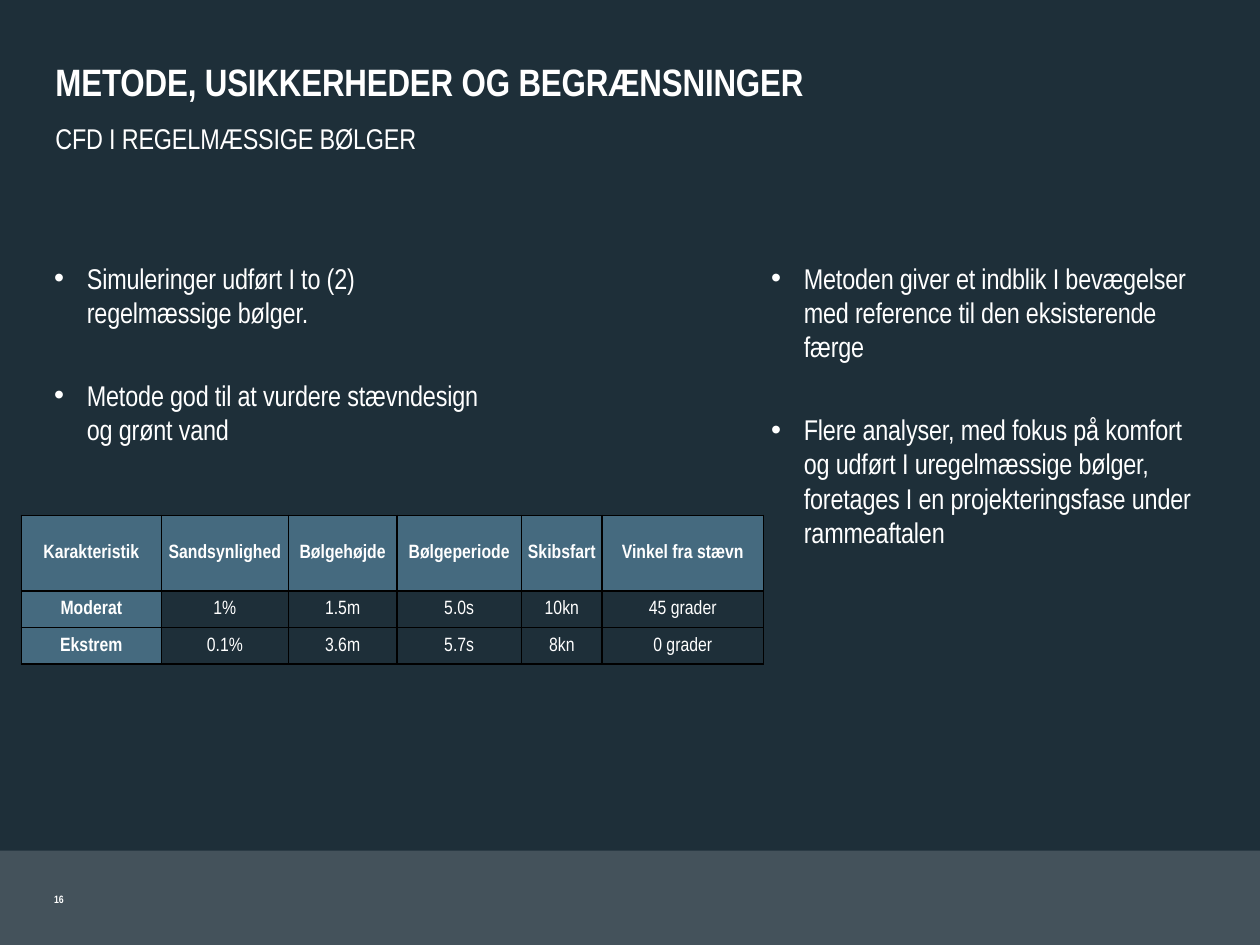
from lxml import etree
from pptx import Presentation
from pptx.dml.color import RGBColor
from pptx.enum.shapes import MSO_SHAPE
from pptx.enum.text import MSO_ANCHOR, MSO_AUTO_SIZE, PP_ALIGN
from pptx.oxml.ns import qn
from pptx.util import Inches, Pt

RECT = MSO_SHAPE.RECTANGLE
TOP, MIDDLE = MSO_ANCHOR.TOP, MSO_ANCHOR.MIDDLE
LEFT, CENTER = PP_ALIGN.LEFT, PP_ALIGN.CENTER
NO_FIT = MSO_AUTO_SIZE.NONE

# Content
TITLE = "METODE, USIKKERHEDER OG BEGRÆNSNINGER"
SUB = "CFD I REGELMÆSSIGE BØLGER"
PAGE = "16"
LISTS = [
    (0.43, ["Simuleringer udført I to (2) regelmæssige bølger.",
            "Metode god til at vurdere stævndesign og grønt vand"]),
    (6.12, ["Metoden giver et indblik I bevægelser med reference til "
            "den eksisterende færge",
            "Flere analyser, med fokus på komfort og udført I "
            "uregelmæssige bølger, foretages I en projekteringsfase "
            "under rammeaftalen"]),
]
WAVES = [
    ["Karakteristik", "Sandsynlighed", "Bølgehøjde", "Bølgeperiode",
     "Skibsfart", "Vinkel fra stævn"],
    ["Moderat", "1%", "1.5m", "5.0s", "10kn", "45 grader"],
    ["Ekstrem", "0.1%", "3.6m", "5.7s", "8kn", "0 grader"],
]
COLS = [1.11, 1.01, 0.86, 0.99, 0.64, 1.28]
ROWS = [0.6, 0.29, 0.29]

THEME = {
    "font": "Arial Narrow",
    "back": RGBColor(0x1E, 0x2F, 0x39),
    "band": RGBColor(0x44, 0x52, 0x5B),
    "head": RGBColor(0x45, 0x6A, 0x7F),
    "text": RGBColor(0xFF, 0xFF, 0xFF),
    "edge": "000000",
    "title": 21.8, "body": 16.3, "cell": 11, "page": 6.1,
}


def add_run(para, text, size, bold=False, tight=True):
    run = para.add_run()
    run.text = text
    font = run.font
    font.name, font.size, font.bold = THEME["font"], Pt(THEME[size]), bold
    font.color.rgb = THEME["text"]
    if tight:
        run._r.get_or_add_rPr().set("spc", "-10")


def set_frame(shape, box, inset=0):
    shape.left, shape.top, shape.width, shape.height = map(Inches, box)
    frame = shape.text_frame
    frame.word_wrap, frame.auto_size = True, NO_FIT
    frame.vertical_anchor = TOP
    frame.margin_left = frame.margin_right = frame.margin_bottom = 0
    frame.margin_top = Inches(inset)
    para = frame.paragraphs[0]
    para.alignment = LEFT
    return frame, para


def add_box(slide, box, inset=0):
    return set_frame(slide.shapes.add_textbox(0, 0, 0, 0), box, inset)


def add_bullet(para):
    props = para._p.get_or_add_pPr()
    props.set("marL", str(Inches(0.26)))
    props.set("indent", str(-Inches(0.26)))
    etree.SubElement(props, qn("a:buFont"), typeface="Arial")
    etree.SubElement(props, qn("a:buChar"), char="•")


def add_list(slide, left, items):
    frame, para = add_box(slide, (left, 2.07, 3.45, 3.9))
    for num, item in enumerate(items):
        if num:
            para = frame.add_paragraph()
        add_bullet(para)
        if num:
            para.space_before = Pt(23.7)
        para.space_after = Pt(4.1)
        add_run(para, item, "body")


def add_edges(cell):
    props = cell._tc.get_or_add_tcPr()
    for side in ("lnL", "lnR", "lnT", "lnB"):
        line = etree.SubElement(props, qn("a:" + side), w=str(Pt(1)))
        fill = etree.SubElement(line, qn("a:solidFill"))
        etree.SubElement(fill, qn("a:srgbClr"), val=THEME["edge"])


def fill_cell(cell, text, head):
    add_edges(cell)
    if head:
        cell.fill.solid()
        cell.fill.fore_color.rgb = THEME["head"]
    else:
        cell.fill.background()
    cell.vertical_anchor = MIDDLE
    cell.margin_left = cell.margin_right = Inches(0.05)
    cell.margin_top = cell.margin_bottom = 0
    para = cell.text_frame.paragraphs[0]
    para.alignment, para.line_spacing = CENTER, 1.07
    para.space_after = Pt(8)
    add_run(para, text, "cell", head, tight=False)


def add_waves(slide):
    table = slide.shapes.add_table(
        len(ROWS), len(COLS), Inches(0.17), Inches(4.09),
        Inches(sum(COLS)), Inches(sum(ROWS))).table
    for col, width in zip(table.columns, COLS):
        col.width = Inches(width)
    for row, height in zip(table.rows, ROWS):
        row.height = Inches(height)
    for r, line in enumerate(WAVES):
        for c, text in enumerate(line):
            fill_cell(table.cell(r, c), text, r == 0 or c == 0)


def main():
    deck = Presentation()
    deck.slide_width, deck.slide_height = Inches(10), Inches(7.5)
    slide = deck.slides.add_slide(deck.slide_layouts[5])
    slide.background.fill.solid()
    slide.background.fill.fore_color.rgb = THEME["back"]

    # Footer band
    band = slide.shapes.add_shape(
        RECT, 0, Inches(6.75), Inches(10), Inches(0.75))
    band.shadow.inherit = False
    band.fill.solid()
    band.fill.fore_color.rgb = THEME["band"]
    band.line.fill.background()

    # Headings
    para = set_frame(slide.shapes.title, (0.44, 0.46, 9.13, 0.8))[1]
    add_run(para, TITLE, "title", bold=True)
    para = add_box(slide, (0.44, 0.96, 9.13, 0.34))[1]
    add_run(para, SUB, "body")

    # Bullet lists
    for left, items in LISTS:
        add_list(slide, left, items)

    # Page number
    para = add_box(slide, (0.43, 7.06, 0.43, 0.44), 0.04)[1]
    para.line_spacing = 0.83
    add_run(para, PAGE, "page", bold=True)

    # Wave table
    add_waves(slide)
    deck.save("out.pptx")


if __name__ == "__main__":
    main()
